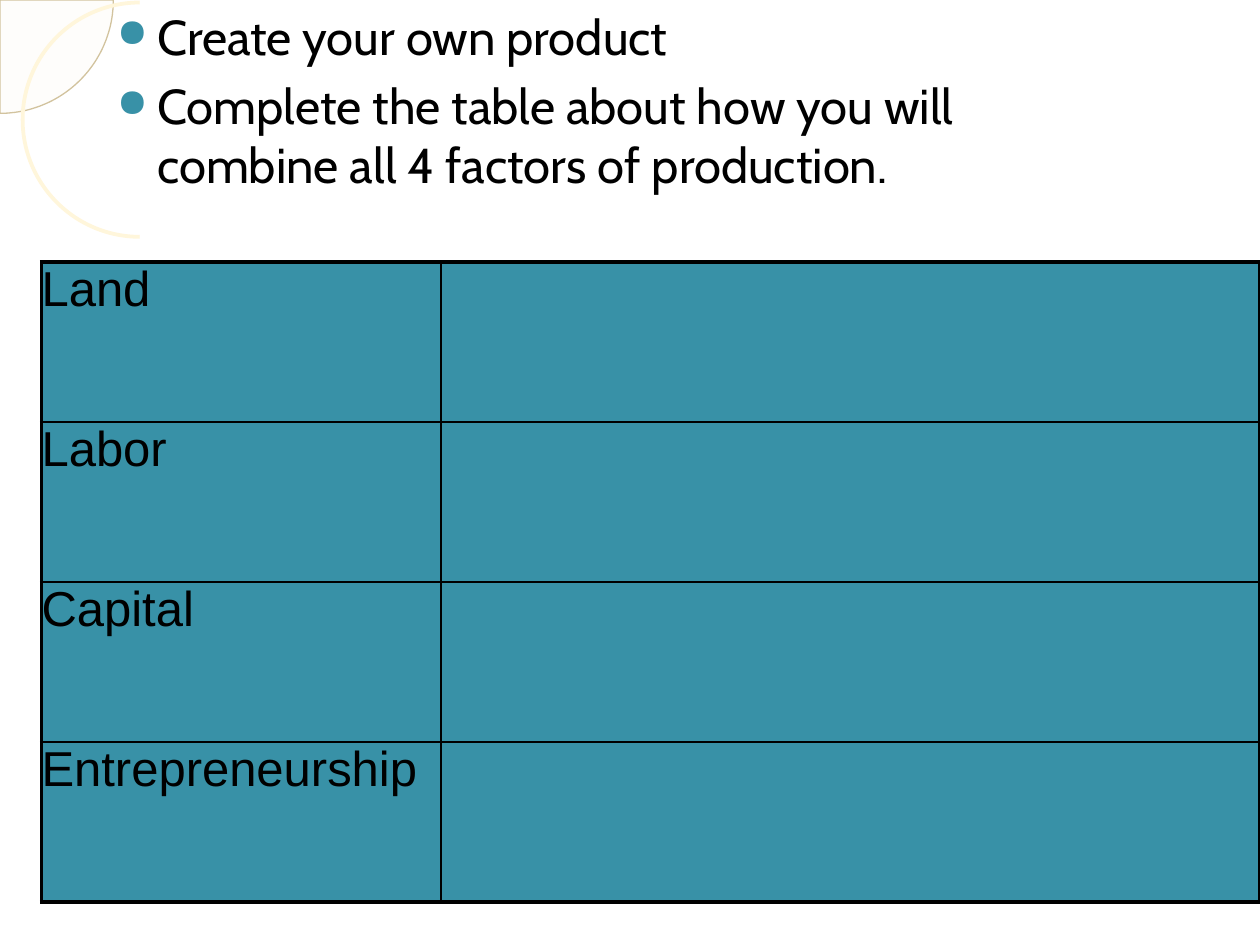
"""Build the factors of production worksheet slide."""
from math import cos, pi, sin

from lxml.etree import SubElement
from pptx import Presentation
from pptx.dml.color import RGBColor
from pptx.enum.shapes import MSO_SHAPE as Shape
from pptx.oxml import parse_xml
from pptx.oxml.ns import nsdecls, qn
from pptx.util import Inches, Pt

COLORS = {
    "teal": "3891A7",
    "black": "000000",
    "white": "FFFFFF",
    "cream": "FEFAF4",
    "tan": "D2C39E",
    "ring": "FFF6DB",
}


def write_text(para, text, font="Arial", size=28, color="black", bullet=None, before=0):
    if bullet:
        props = para._p.get_or_add_pPr()
        props.set("marL", str(Inches(0.4)))
        props.set("indent", str(Inches(-0.32)))
        bullet_color = SubElement(props, qn("a:buClr"))
        SubElement(bullet_color, qn("a:srgbClr"), val=COLORS["teal"])
        SubElement(props, qn("a:buSzPct"), val="80000")
        SubElement(props, qn("a:buChar"), char=bullet)
    para.space_before = Pt(before)
    span = para.add_run()
    span.text = text
    span.font.name = font
    span.font.size = Pt(size)
    span.font.color.rgb = RGBColor.from_string(COLORS[color])


def set_borders(cell, widths):
    props = cell._tc.get_or_add_tcPr()
    for position, (side, width) in enumerate(zip("LRTB", widths)):
        border = parse_xml(
            f'<a:ln{side} {nsdecls("a")} w="{Pt(width)}"><a:solidFill>'
            f'<a:srgbClr val="{COLORS["black"]}"/></a:solidFill></a:ln{side}>'
        )
        props.insert(position, border)


deck = Presentation()
deck.slide_width = Inches(10)
deck.slide_height = Inches(7.5)
page = deck.slides.add_slide(deck.slide_layouts[6])

radius = 0.9
steps = 48
arc = [
    (Inches(radius * cos(pi / 2 * step / steps)), Inches(radius * sin(pi / 2 * step / steps)))
    for step in range(steps + 1)
]
builder = page.shapes.build_freeform(0, 0)
builder.add_line_segments(arc, close=True)
quarter = builder.convert_to_shape()
quarter.shadow.inherit = False
quarter.fill.solid()
quarter.fill.fore_color.rgb = RGBColor.from_string(COLORS["cream"])
fill_color = quarter._element.spPr.find(qn("a:solidFill")).find(qn("a:srgbClr"))
SubElement(fill_color, qn("a:alpha"), val="33000")
quarter.line.color.rgb = RGBColor.from_string(COLORS["tan"])
quarter.line.width = Pt(0.75)

ring = page.shapes.add_shape(Shape.OVAL, Inches(0.18), Inches(0.02), Inches(1.86), Inches(1.86))
ring.shadow.inherit = False
ring.fill.background()
ring.line.color.rgb = RGBColor.from_string(COLORS["ring"])
ring.line.width = Pt(2.15)

for panel_width in (8.89, 0.08):
    panel = page.shapes.add_shape(
        Shape.RECTANGLE, Inches(1.11), Inches(0), Inches(panel_width), Inches(7.5)
    )
    panel.shadow.inherit = False
    panel.fill.solid()
    panel.fill.fore_color.rgb = RGBColor.from_string(COLORS["white"])
    panel.line.fill.background()

box = page.shapes.add_textbox(Inches(0.75), Inches(0), Inches(8.33), Inches(6.33))
frame = box.text_frame
frame.word_wrap = True
write_text(frame.paragraphs[0], "Create your own product", font="Cabin", bullet="●")
write_text(
    frame.add_paragraph(),
    "Complete the table about how you will combine all 4 factors of production.",
    font="Cabin",
    bullet="●",
    before=6,
)

factors = ["Land", "Labor", "Capital", "Entrepreneurship"]
last = len(factors) - 1
table = page.shapes.add_table(
    len(factors), 2, Inches(0.33), Inches(2.08), Inches(9.67), Inches(5.08)
).table
table.columns[0].width = Inches(3.17)
table.columns[1].width = Inches(6.5)
thin, thick = 1, 2.25
for row, factor in enumerate(factors):
    table.rows[row].height = Inches(1.27)
    for column in range(2):
        cell = table.cell(row, column)
        cell.fill.solid()
        cell.fill.fore_color.rgb = RGBColor.from_string(COLORS["teal"])
        edges = (column == 0, column == 1, row == 0, row == last)
        set_borders(cell, [thick if outer else thin for outer in edges])
    label = table.cell(row, 0)
    label.margin_left = label.margin_right = label.margin_top = label.margin_bottom = 0
    write_text(label.text_frame.paragraphs[0], factor)

deck.save("out.pptx")
